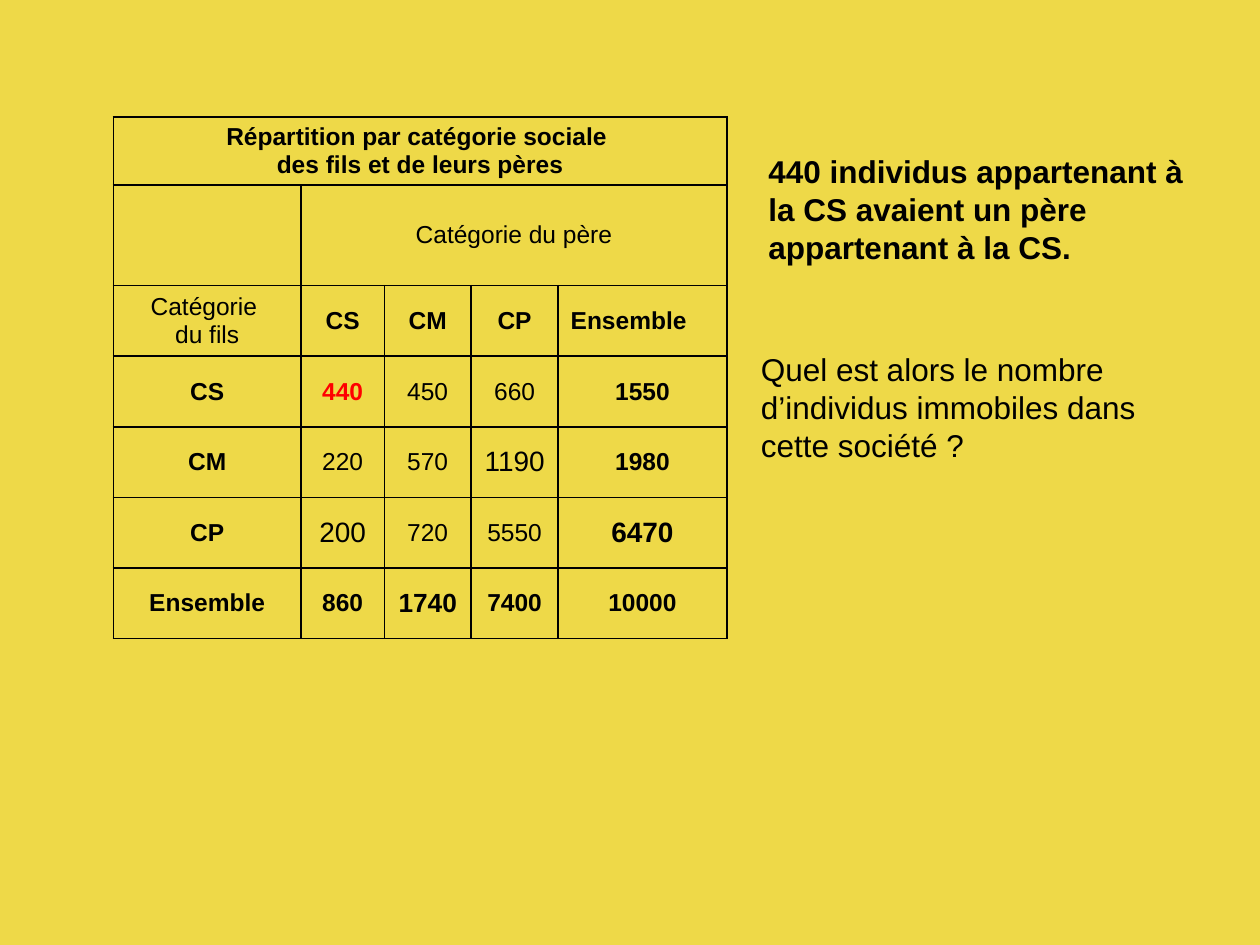
from pptx import Presentation
from pptx.dml.color import RGBColor
from pptx.enum.text import MSO_ANCHOR, MSO_AUTO_SIZE, PP_ALIGN
from pptx.oxml import parse_xml
from pptx.oxml.ns import nsdecls
from pptx.util import Inches, Pt

BACKGROUND, BLACK, RED = "EED948", "000000", "FF0000"
COLUMNS = [1.49, 0.66, 0.69, 0.69, 1.34]
ROWS = [0.53, 0.8] + [0.56] * 5
CELLS = [
    ["Répartition par catégorie sociale \ndes fils et de leurs pères"],
    ["", "Catégorie du père"],
    ["Catégorie \ndu fils", "CS", "CM", "CP", "Ensemble"],
    ["CS", "440", "450", "660", "1550"],
    ["CM", "220", "570", "1190", "1980"],
    ["CP", "200", "720", "5550", "6470"],
    ["Ensemble", "860", "1740", "7400", "10000"],
]
LARGER = {"1190": 16, "200": 16, "6470": 16, "1740": 15}
REGULAR = {(1, 1), (2, 0), (3, 2), (3, 3), (4, 1), (4, 2), (4, 3),
           (5, 1), (5, 2), (5, 3)}


def rgb(color):
    return RGBColor.from_string(color)


def set_font(font, color=BLACK, **values):
    for name, value in {"name": "Arial", **values}.items():
        setattr(font, name, value)
    font.color.rgb = rgb(color)


def add_borders(cell):
    tcPr = cell._tc.get_or_add_tcPr()
    for i, side in enumerate(("lnL", "lnR", "lnT", "lnB")):
        tcPr.insert(i, parse_xml(
            f'<a:{side} {nsdecls("a")} w="{Pt(1)}"><a:solidFill>'
            f'<a:srgbClr val="{BLACK}"/></a:solidFill></a:{side}>'))


def fill_cell(cell, text, **font):
    cell.vertical_anchor = MSO_ANCHOR.MIDDLE
    cell.text_frame.text = text
    for p in cell.text_frame.paragraphs:
        p.alignment = PP_ALIGN.CENTER
        for r in p.runs:
            set_font(r.font, **font)


def add_mobility_table(s, left, top):
    frame = s.shapes.add_table(
        len(ROWS), len(COLUMNS), Inches(left), Inches(top),
        Inches(sum(COLUMNS)), Inches(sum(ROWS)))
    table = frame.table
    table.first_row = table.horz_banding = False
    for column, width in zip(table.columns, COLUMNS):
        column.width = Inches(width)
    for row, height in zip(table.rows, ROWS):
        row.height = Inches(height)
    for cell in table.iter_cells():
        cell.fill.background()
        add_borders(cell)
    for row in (0, 1):
        table.cell(row, row).merge(table.cell(row, len(COLUMNS) - 1))
    for i, row in enumerate(CELLS):
        for j, text in enumerate(row):
            fill_cell(table.cell(i, j), text,
                      color=RED if text == "440" else BLACK,
                      size=Pt(LARGER.get(text, 14)),
                      bold=(i, j) not in REGULAR)
    table.cell(2, 4).text_frame.paragraphs[0].alignment = PP_ALIGN.LEFT


def add_comment(s, left, top, width, text, bold):
    box = s.shapes.add_textbox(
        Inches(left), Inches(top), Inches(width), Inches(1))
    tf = box.text_frame
    tf.word_wrap = True
    tf.auto_size = MSO_AUTO_SIZE.SHAPE_TO_FIT_TEXT
    r = tf.paragraphs[0].add_run()
    r.text = text
    set_font(r.font, size=Pt(18), bold=bold)


def main():
    prs = Presentation()
    prs.slide_width, prs.slide_height = Inches(10), Inches(7.5)
    s = prs.slides.add_slide(prs.slide_layouts[6])
    s.background.fill.solid()
    s.background.fill.fore_color.rgb = rgb(BACKGROUND)
    add_mobility_table(s, 0.9, 0.93)
    add_comment(s, 5.94, 2.73, 3.7,
                "Quel est alors le nombre d’individus immobiles dans "
                "cette société ?", False)
    add_comment(s, 6, 1.16, 3.5,
                "440 individus appartenant à la CS avaient un père "
                "appartenant à la CS.", True)
    prs.save("out.pptx")


if __name__ == "__main__":
    main()
